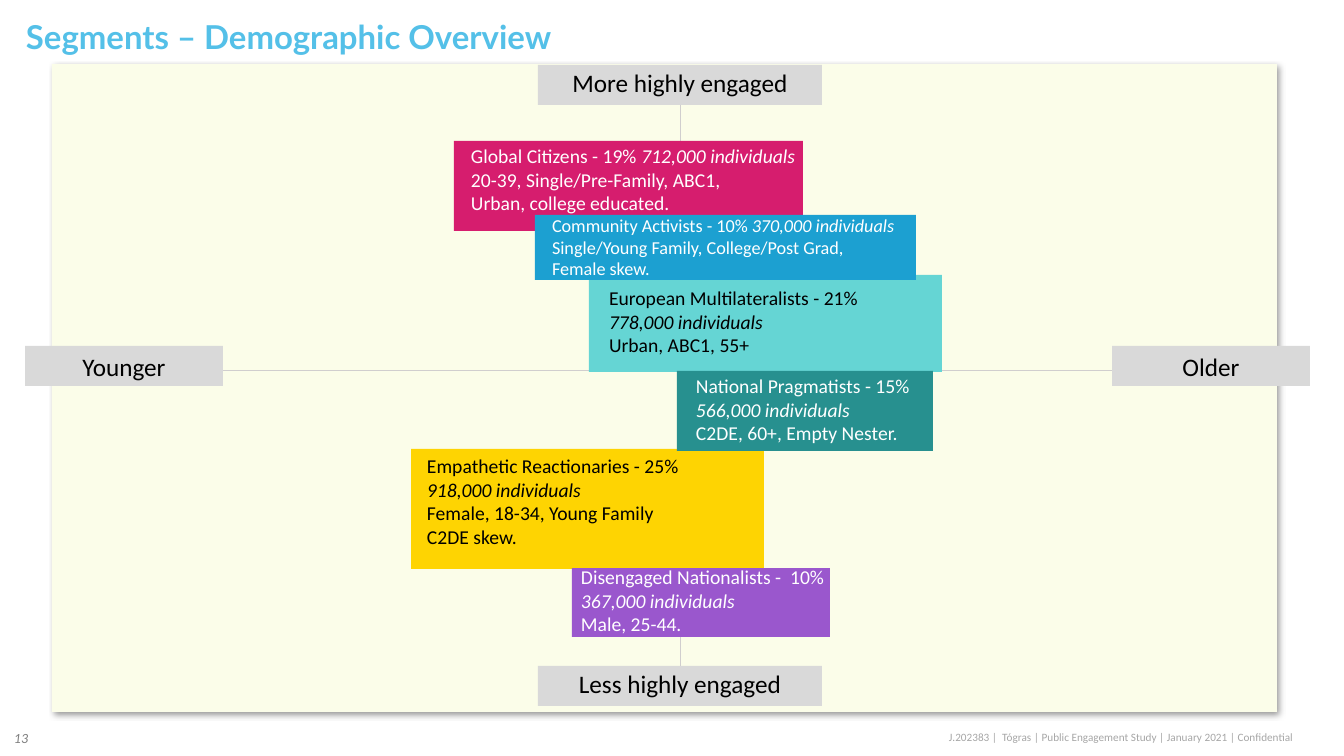
from dataclasses import dataclass

import pptx
import pptx.dml.color
import pptx.enum.shapes
import pptx.enum.text
import pptx.oxml
import pptx.oxml.ns
import pptx.util

# ---- Content (lengths in px) ----
SLIDE_SIZE = (1344, 756)
TITLE = "Segments – Demographic Overview"
PAGE_NUMBER = "13"
FOOTER = "J.202383 |  Tógras | Public Engagement Study | January 2021 | Confidential"

PANEL = (52, 64, 1225, 648)
AGE_AXIS = (86, 370, 1292, 370)

# caption: (box, line spacing)
AXIS_LABELS = {
    "Younger": ((25, 346, 198, 40), 1.0),
    "Older": ((1112, 346, 198, 40), 1.0),
    "More highly engaged": ((538, 65, 284, 40), 0.8),
    "Less highly engaged": ((538, 666, 284, 40), 0.8),
}

# Back to front. "inline" keeps the head count on the line of the name.
SEGMENTS = [
    dict(name="European Multilateralists - 21%", count="778,000 individuals",
         details=["Urban, ABC1, 55+"], inline=False, fill="65D5D4", ink="000000",
         size=14, box=(589, 275, 353, 97), text_box=(599, 281, 276, 82)),
    dict(name="Empathetic Reactionaries - 25%", count="918,000 individuals",
         details=["Female, 18-34, Young Family", "C2DE skew."], inline=False,
         fill="FED402", ink="000000",
         size=14, box=(411, 449, 353, 120), text_box=(417, 449, 275, 105)),
    dict(name="Disengaged Nationalists -  10%", count="367,000 individuals",
         details=["Male, 25-44."], inline=False, fill="9A57CD", ink="FFFFFF",
         size=14, box=(572, 568, 258, 69), text_box=(571, 560, 268, 82)),
    dict(name="Global Citizens - 19%", count="712,000 individuals",
         details=["20-39, Single/Pre-Family, ABC1,", "Urban, college educated."],
         inline=True, fill="D61D6E", ink="FFFFFF",
         size=14, box=(454, 141, 349, 90), text_box=(461, 139, 349, 82)),
    dict(name="National Pragmatists - 15%", count="566,000 individuals",
         details=["C2DE, 60+, Empty Nester."], inline=False, fill="27908F", ink="FFFFFF",
         size=14, box=(677, 371, 256, 80), text_box=(686, 369, 258, 82)),
    dict(name="Community Activists - 10%", count="370,000 individuals",
         details=["Single/Young Family, College/Post Grad,", "Female skew."],
         inline=True, fill="1CA0D1", ink="FFFFFF",
         size=13, box=(535, 215, 381, 65), text_box=(542, 209, 368, 77)),
]


@dataclass(frozen=True)
class Theme:
    title_font: str = "Lato"
    body_font: str = "Calibri"
    title_color: str = "54C0E8"
    panel_color: str = "FBFDE9"
    label_color: str = "D9D9D9"
    label_ink: str = "000000"
    axis_color: str = "D0CECE"
    page_color: str = "808080"
    footer_color: str = "A6A6A6"
    title_size: float = 23.5
    label_size: float = 18
    page_size: float = 10
    footer_size: float = 8


THEME = Theme()
EMU_PER_PX = 914400 / 100.8
ALIGN = pptx.enum.text.PP_ALIGN
ANCHOR = pptx.enum.text.MSO_ANCHOR

PANEL_SHADOW = (
    f'<a:effectLst {pptx.oxml.ns.nsdecls("a")}>'
    '<a:outerShdw blurRad="50800" dist="38100" dir="2700000" algn="tl" rotWithShape="0">'
    '<a:srgbClr val="000000"><a:alpha val="40000"/></a:srgbClr>'
    '</a:outerShdw></a:effectLst>'
)


# ---- Helpers ----
def px(*lengths):
    return [pptx.util.Emu(round(length * EMU_PER_PX)) for length in lengths]


def rgb(code):
    return pptx.dml.color.RGBColor.from_string(code)


def write(holder, paragraphs, *, size, color, font=THEME.body_font, bold=False,
          italic=False, align=ALIGN.LEFT, anchor=ANCHOR.TOP, spacing=1.0, side_inset=10):
    """Fill a shape; each paragraph is a list of (text, is_italic) runs, or one string."""
    frame = holder.text_frame
    frame.word_wrap = True
    frame.auto_size = pptx.enum.text.MSO_AUTO_SIZE.NONE
    frame.vertical_anchor = anchor
    frame.margin_left, frame.margin_right = px(side_inset, side_inset)
    frame.margin_top, frame.margin_bottom = px(5, 5)
    if isinstance(paragraphs, str):
        paragraphs = [[(paragraphs, italic)]]
    for index, runs in enumerate(paragraphs):
        paragraph = frame.paragraphs[0] if index == 0 else frame.add_paragraph()
        paragraph.alignment = align
        paragraph.line_spacing = spacing
        for text, is_italic in runs:
            run = paragraph.add_run()
            run.text = text
            run.font.name = font
            run.font.size = pptx.util.Pt(size)
            run.font.bold = bold
            run.font.italic = is_italic
            run.font.color.rgb = rgb(color)


def add_block(slide, box, fill):
    block = slide.shapes.add_shape(pptx.enum.shapes.MSO_SHAPE.RECTANGLE, *px(*box))
    block.shadow.inherit = False
    block.fill.solid()
    block.fill.fore_color.rgb = rgb(fill)
    block.line.fill.background()
    return block


def add_axis(slide, ends):
    axis = slide.shapes.add_connector(pptx.enum.shapes.MSO_CONNECTOR.STRAIGHT, *px(*ends))
    axis.line.color.rgb = rgb(THEME.axis_color)
    axis.line.width = pptx.util.Pt(0.5)
    axis.element.spPr.append(pptx.oxml.parse_xml(f'<a:effectLst {pptx.oxml.ns.nsdecls("a")}/>'))
    return axis


def segment_lines(segment):
    name, count = segment["name"], segment["count"]
    if segment["inline"]:
        heading = [[(name + " ", False), (count, True)]]
    else:
        heading = [[(name, False)], [(count, True)]]
    return heading + [[(detail, False)] for detail in segment["details"]]


def main():
    deck = pptx.Presentation()
    deck.slide_width, deck.slide_height = px(*SLIDE_SIZE)
    slide = deck.slides.add_slide(deck.slide_layouts[5])

    # Title, page number and footer
    title = slide.shapes.title
    title.left, title.top, title.width, title.height = px(16, 16, 1079, 41)
    write(title, TITLE, size=THEME.title_size, color=THEME.title_color,
          font=THEME.title_font, bold=True, spacing=0.9)
    page_number = slide.shapes.add_textbox(*px(4, 718, 58, 40))
    write(page_number, PAGE_NUMBER, size=THEME.page_size, color=THEME.page_color,
          italic=True, anchor=ANCHOR.MIDDLE)
    footer = slide.shapes.add_textbox(*px(939, 725, 400, 24))
    write(footer, FOOTER, size=THEME.footer_size, color=THEME.footer_color)

    # Background panel
    panel = add_block(slide, PANEL, THEME.panel_color)
    panel_properties = panel.element.spPr
    panel_properties.remove(panel_properties.find(pptx.oxml.ns.qn("a:effectLst")))
    panel_properties.append(pptx.oxml.parse_xml(PANEL_SHADOW))

    # Axes and their labels
    add_axis(slide, AGE_AXIS)
    labels = {}
    for caption, (box, spacing) in AXIS_LABELS.items():
        labels[caption] = add_block(slide, box, THEME.label_color)
        write(labels[caption], caption, size=THEME.label_size, color=THEME.label_ink,
              align=ALIGN.CENTER, anchor=ANCHOR.MIDDLE, spacing=spacing, side_inset=4)
    engagement_axis = add_axis(slide, (680, 105, 680, 666))
    engagement_axis.begin_connect(labels["More highly engaged"], 2)
    engagement_axis.end_connect(labels["Less highly engaged"], 0)

    # Segments
    for segment in SEGMENTS:
        add_block(slide, segment["box"], segment["fill"])
        profile = slide.shapes.add_textbox(*px(*segment["text_box"]))
        write(profile, segment_lines(segment), size=segment["size"], color=segment["ink"])

    deck.save("out.pptx")


if __name__ == "__main__":
    main()
